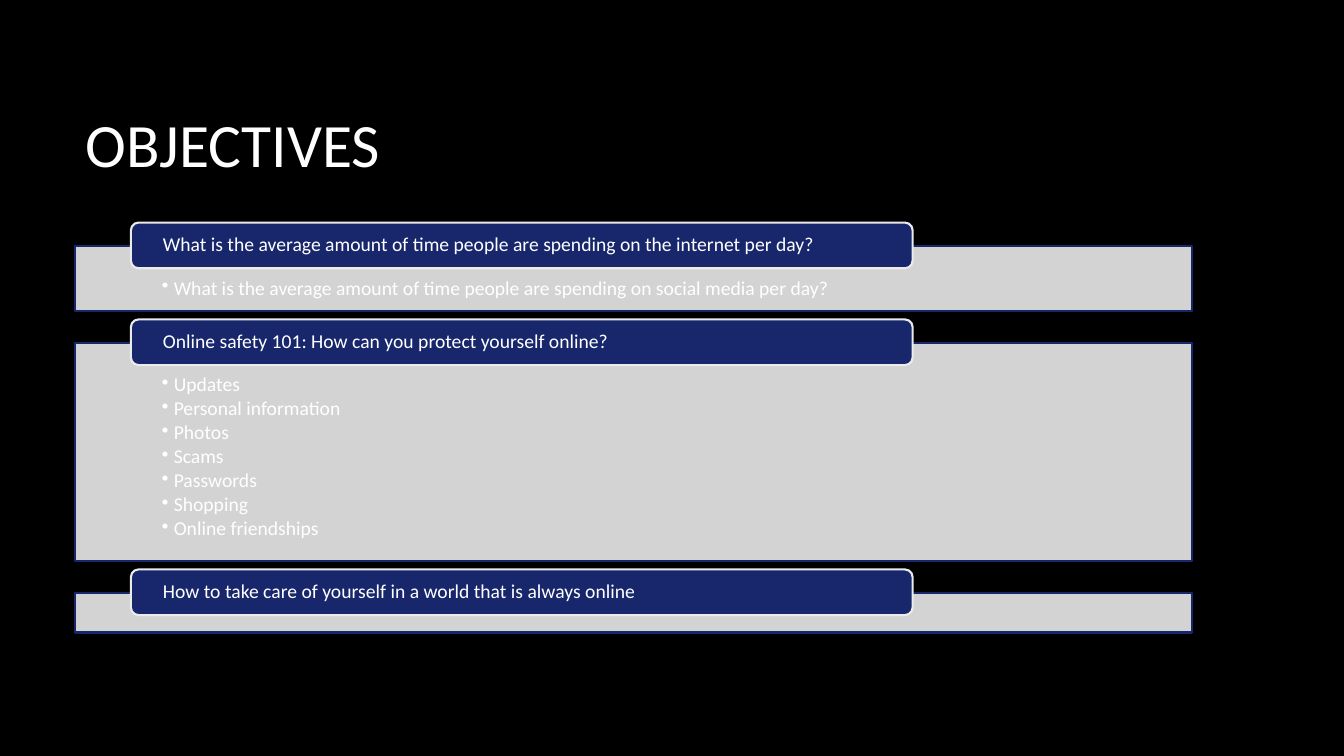
import pptx
import pptx.dml.color
import pptx.enum.shapes
import pptx.enum.text
import pptx.oxml
import pptx.oxml.ns
import pptx.util
from lxml import etree

Cm, Pt = pptx.util.Cm, pptx.util.Pt
Shape = pptx.enum.shapes.MSO_SHAPE
Anchor = pptx.enum.text.MSO_ANCHOR
Align = pptx.enum.text.PP_ALIGN
qn = pptx.oxml.ns.qn


def color(text):
    return pptx.dml.color.RGBColor.from_string(text)


class Board:
    font, white, navy, pale = "Calibri", "FFFFFF", "18276C", "EBEBEB"
    left, width = 1.9, 28.15

    def __init__(self, slide):
        self.slide = slide
        slide.background.fill.solid()
        slide.background.fill.fore_color.rgb = color("000000")

    def words(self, shape, lines, size, anchor, pads=None, after=0, dots=False):
        frame = shape.text_frame
        frame.word_wrap = True
        frame.vertical_anchor = anchor
        if pads:
            (frame.margin_left, frame.margin_top,
             frame.margin_right, frame.margin_bottom) = map(Cm, pads)
        frame.text = "\n".join(lines)
        for para in frame.paragraphs:
            if dots:
                props = para._p.get_or_add_pPr()
                props.set("marL", str(Cm(0.3)))
                props.set("indent", str(Cm(-0.3)))
                etree.SubElement(props, qn("a:buChar")).set("char", "•")
            para.alignment = Align.LEFT
            para.line_spacing = 0.9
            para.space_after = Pt(after)
            for run in para.runs:
                run.font.name = self.font
                run.font.size = Pt(size)
                run.font.color.rgb = color(self.white)

    def block(self, kind, box, fill, line):
        shape = self.slide.shapes.add_shape(kind, *map(Cm, box))
        shape.shadow.inherit = False
        shape.fill.solid()
        shape.fill.fore_color.rgb = color(fill)
        shape.line.color.rgb = color(line)
        shape.line.width = Pt(1.5)
        return shape

    def title(self, text):
        box = self.slide.shapes.add_textbox(
            Cm(self.left), Cm(1.7), Cm(self.width), Cm(4.04))
        self.words(box, [text], 44, Anchor.MIDDLE)

    def band(self, top, height, items):
        shape = self.block(Shape.RECTANGLE, (self.left, top, self.width, height),
                           self.pale, self.navy)
        # Let the background show through a little
        tint = shape.fill._xPr.find(".//" + qn("a:srgbClr"))
        etree.SubElement(tint, qn("a:alpha")).set("val", "90000")
        if items:
            self.words(shape, items, 14, Anchor.TOP,
                       (2.18, 0.81, 2.18, 0.28), 2, dots=True)

    def label(self, top, text):
        shape = self.block(Shape.ROUNDED_RECTANGLE, (3.3, top, 19.7, 1.15),
                           self.navy, self.pale)
        self.words(shape, [text], 14, Anchor.MIDDLE, (0.75, 0, 0.75, 0))


def main():
    deck = pptx.Presentation()
    deck.slide_width, deck.slide_height = Cm(33.87), Cm(19.05)
    board = Board(deck.slides.add_slide(deck.slide_layouts[6]))

    board.title("OBJECTIVES")

    # Heading, band height and bullets of each section
    parts = [
        ("What is the average amount of time people are spending on the internet per day?",
         1.64,
         ["What is the average amount of time people are spending on social media per day?"]),
        ("Online safety 101: How can you protect yourself online?",
         5.5,
         ["Updates", "Personal information", "Photos", "Scams",
          "Passwords", "Shopping", "Online friendships"]),
        ("How to take care of yourself in a world that is always online", 1, []),
    ]

    # Stack the sections with equal gaps
    top, gap, rise = 6.2, 0.8, 0.59
    for head, height, items in parts:
        board.band(top, height, items)
        board.label(top - rise, head)
        top += height + gap

    deck.save("out.pptx")


if __name__ == "__main__":
    main()
